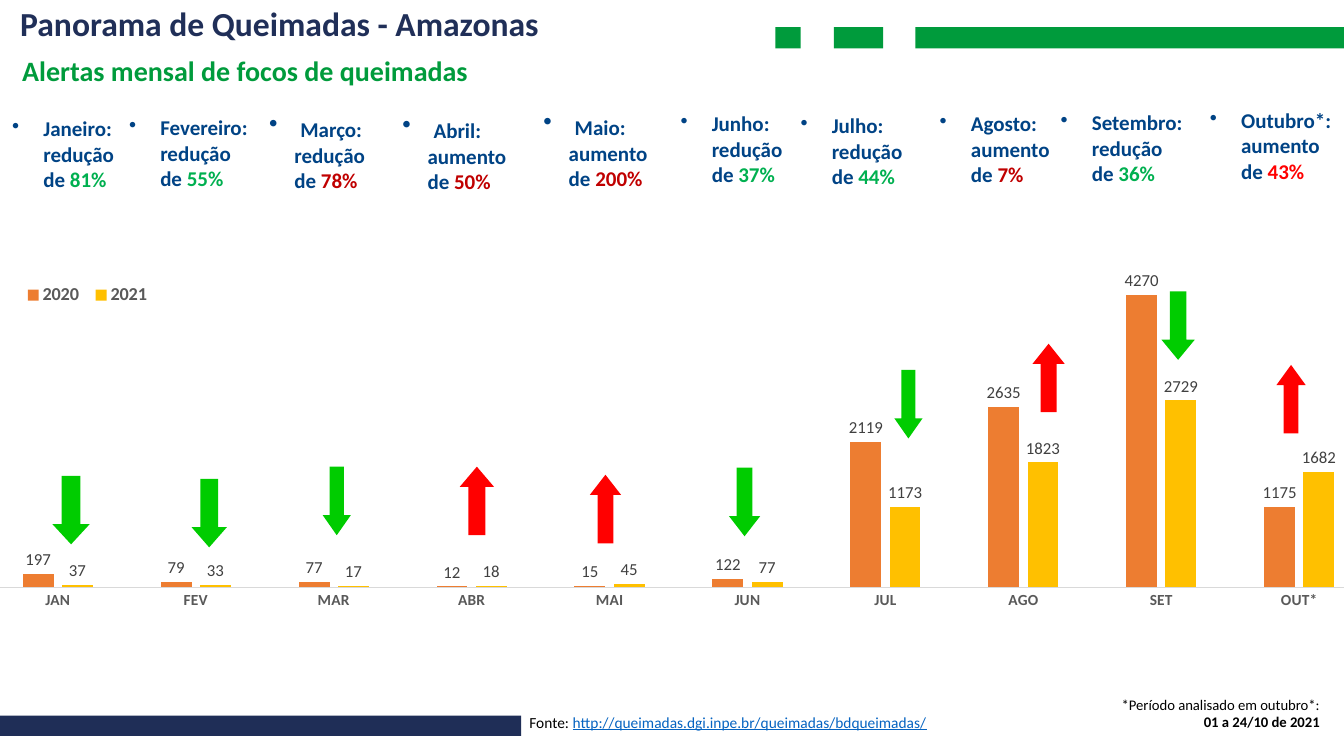
from collections import namedtuple

from lxml.etree import SubElement
from pptx import Presentation
from pptx.chart.data import CategoryChartData
from pptx.dml.color import RGBColor
from pptx.enum.chart import XL_CHART_TYPE as ChartType, XL_LABEL_POSITION as LabelPosition
from pptx.enum.chart import XL_LEGEND_POSITION as LegendPosition, XL_TICK_MARK as TickMark
from pptx.enum.shapes import MSO_SHAPE as Shape
from pptx.enum.text import MSO_ANCHOR as Anchor, MSO_AUTO_SIZE as AutoSize, PP_ALIGN as Align
from pptx.oxml.ns import qn
from pptx.util import Inches, Pt

FONT = "Calibri"
NAVY, GREEN, BLUE, BLACK = "1F2E57", "009B3C", "004385", "000000"
LOWER, HIGHER, ALERT = "00B050", "C00000", "FF0000"
ARROW_HEIGHT, HEAD_LENGTH = 0.68, 0.2

Month = namedtuple("Month", "label name trend percent colour tabbed caption arrow before after")
MONTHS = [
    Month("JAN", "Janeiro", "redução", "81%", LOWER, False, (0.1, 1.14, 1.12), (0.52, 4.72, 0.37), 197, 37),
    Month("FEV", "Fevereiro", "redução", "55%", LOWER, False, (1.26, 1.13, 1.27), (1.9, 4.75, 0.35), 79, 33),
    Month("MAR", "Março", "redução", "78%", HIGHER, True, (2.65, 1.1, 1.2), (3.2, 4.63, 0.28), 77, 17),
    Month("ABR", "Abril", "aumento", "50%", HIGHER, True, (3.97, 1.11, 1.28), (4.56, 4.63, 0.34), 12, 18),
    Month("MAI", "Maio", "aumento", "200%", HIGHER, True, (5.37, 1.08, 1.22), (5.85, 4.71, 0.31), 15, 45),
    Month("JUN", "Junho", "redução", "37%", LOWER, False, (6.73, 1.09, 1.23), (7.23, 4.64, 0.31), 122, 77),
    Month("JUL", "Julho", "redução", "44%", LOWER, False, (7.92, 1.11, 1.24), (8.87, 3.67, 0.28), 2119, 1173),
    Month("AGO", "Agosto", "aumento", "7%", HIGHER, False, (9.3, 1.09, 1.33), (10.24, 3.41, 0.32), 2635, 1823),
    Month("SET", "Setembro", "redução", "36%", LOWER, False, (10.5, 1.08, 1.27), (11.52, 2.89, 0.33), 4270, 2729),
    Month("OUT*", "Outubro*", "aumento", "43%", ALERT, False, (11.98, 1.06, 1.3), (12.66, 3.62, 0.29), 1175, 1682),
]


def colour(value):
    """Turn a hex string into a colour."""
    return RGBColor.from_string(value)


def set_font(font, size, value, bold=False):
    """Apply the slide font with a size, colour and weight."""
    font.name = FONT
    font.size = Pt(size)
    font.bold = bold
    font.color.rgb = colour(value)


def add_run(paragraph, text, size, value, bold=False):
    """Append one formatted run."""
    run = paragraph.add_run()
    run.text = text
    set_font(run.font, size, value, bold)
    return run


def add_text_box(slide, left, top, width, height):
    """Add a wrapping text box without side margins and return its frame."""
    box = slide.shapes.add_textbox(Inches(left), Inches(top), Inches(width), Inches(height))
    frame = box.text_frame
    frame.word_wrap = True
    frame.margin_left = frame.margin_right = frame.margin_bottom = 0
    frame.margin_top = Inches(0.01)
    frame.paragraphs[0].space_before = Pt(1)
    return frame


def add_filled(slide, preset, left, top, width, height, value):
    """Add a flat preset shape without an outline."""
    shape = slide.shapes.add_shape(preset, Inches(left), Inches(top), Inches(width), Inches(height))
    shape.shadow.inherit = False
    shape.fill.solid()
    shape.fill.fore_color.rgb = colour(value)
    shape.line.fill.background()
    return shape


def add_bullet(paragraph, left, hanging):
    """Give a paragraph a round bullet, a hanging indent and a tab stop."""
    properties = paragraph._p.get_or_add_pPr()
    properties.set("marL", str(Inches(left)))
    properties.set("indent", str(-Inches(hanging)))
    bullet_colour = SubElement(properties, qn("a:buClr"))
    SubElement(bullet_colour, qn("a:srgbClr"), val=BLUE)
    SubElement(properties, qn("a:buChar"), char="•")
    tabs = SubElement(properties, qn("a:tabLst"))
    SubElement(tabs, qn("a:tab"), pos=str(Inches(0.33)), algn="l")


def set_layout(element, position, inner=False):
    """Place a chart part by fractions of the chart area."""
    layout = element.find(qn("c:layout"))
    if layout is None:
        layout = SubElement(element, qn("c:layout"))
    anchor = element.find(qn("c:legendPos"))
    if anchor is not None:
        anchor.addnext(layout)
    else:
        element.insert(0, layout)
    manual = SubElement(layout, qn("c:manualLayout"))
    if inner:
        SubElement(manual, qn("c:layoutTarget"), val="inner")
    for name in ("xMode", "yMode"):
        SubElement(manual, qn("c:" + name), val="edge")
    for name, fraction in zip("xywh", position):
        SubElement(manual, qn("c:" + name), val=str(fraction))


def add_header(slide, left, top, width):
    """Place the title, the subtitle and the green bars."""
    title = slide.shapes.title
    title.left, title.top = Inches(left + 0.1), Inches(top - 0.02)
    title.width, title.height = Inches(5.84), Inches(0.5)
    frame = title.text_frame
    frame.text = "Panorama de Queimadas - Amazonas"
    frame.word_wrap = False
    frame.auto_size = AutoSize.NONE
    frame.vertical_anchor = Anchor.MIDDLE
    frame.paragraphs[0].alignment = Align.LEFT
    set_font(frame.paragraphs[0].runs[0].font, 24, "202F58", True)
    subtitle = add_text_box(slide, left + 0.22, top + 0.52, 4.45, 0.36)
    subtitle.text = "Alertas mensal de focos de queimadas"
    set_font(subtitle.paragraphs[0].runs[0].font, 20, GREEN, True)
    for offset, length in ((5.64, 0.25), (5.06, 0.49), (4.25, 4.25)):
        add_filled(slide, Shape.RECTANGLE, left + width - offset, top + 0.27, length, 0.21, GREEN)


def add_chart(slide, left, top, width, height):
    """Place the monthly column chart."""
    data = CategoryChartData()
    data.categories = [month.label for month in MONTHS]
    data.add_series("2020", [month.before for month in MONTHS])
    data.add_series("2021", [month.after for month in MONTHS])
    chart = slide.shapes.add_chart(ChartType.COLUMN_CLUSTERED, Inches(left), Inches(top),
                                   Inches(width), Inches(height), data).chart
    set_font(chart.font, 10, BLACK)
    chart.has_title = False
    chart.has_legend = True
    chart.legend.position = LegendPosition.BOTTOM
    chart.legend.include_in_layout = False
    set_font(chart.legend.font, 13, "595959", True)
    set_layout(chart.legend._element, (0.03, 0.04, 0.1, 0.08))
    values, categories = chart.value_axis, chart.category_axis
    values.minimum_scale, values.maximum_scale = 0, 4500
    values.has_major_gridlines = False
    values.visible = False
    categories.major_tick_mark = TickMark.NONE
    categories.format.line.color.rgb = colour("D9D9D9")
    categories.format.line.width = Pt(0.75)
    set_font(categories.tick_labels.font, 11, "595959", True)
    plot = chart.plots[0]
    plot.gap_width, plot.overlap, plot.vary_by_categories = 219, -27, False
    for series, fill in zip(plot.series, ("ED7D31", "FFC000")):
        series.format.fill.solid()
        series.format.fill.fore_color.rgb = colour(fill)
        labels = series.data_labels
        labels.show_value = True
        labels.position = LabelPosition.OUTSIDE_END
        set_font(labels.font, 12, "404040")
    set_layout(plot._element.getparent(), (0.01, 0.04, 0.98, 0.77), True)


def add_caption(slide, month, left, top, width):
    """Place the bulleted summary of one month."""
    paragraph = add_text_box(slide, left, top, width, 0.77).paragraphs[0]
    if month.tabbed:
        add_bullet(paragraph, 0.27, 0.25)
        add_run(paragraph, "\t", 18, BLACK)
    else:
        add_bullet(paragraph, 0.33, 0.31)
    add_run(paragraph, f"{month.name}: {month.trend} de ", 15, BLUE, True)
    add_run(paragraph, month.percent, 15, month.colour, True)


def add_trend_arrow(slide, month, left, top, width):
    """Place the arrow that shows the trend of one month."""
    rising = month.trend == "aumento"
    preset, fill = (Shape.UP_ARROW, "FF0000") if rising else (Shape.DOWN_ARROW, "00CC00")
    arrow = add_filled(slide, preset, left, top, width, ARROW_HEIGHT, fill)
    arrow.adjustments[1] = HEAD_LENGTH / width


def add_footer(slide, left, top, width):
    """Place the navy bar, the source and the period note."""
    add_filled(slide, Shape.RECTANGLE, left, top + 0.21, 5.17, 0.2, NAVY)
    source = add_text_box(slide, left + 5.25, top + 0.17, 3.96, 0.21).paragraphs[0]
    add_run(source, "Fonte: ", 11, BLACK)
    address = add_run(source, "http://queimadas.dgi.inpe.br/queimadas/bdqueimadas/", 11, "0563C1")
    address.font.underline = True
    period = add_text_box(slide, left + width - 2.26, top, 2.02, 0.37)
    period.text = "*Período analisado em outubro*:\n01 a 24/10 de 2021"
    for paragraph, bold in zip(period.paragraphs, (False, True)):
        paragraph.alignment = Align.RIGHT
        set_font(paragraph.runs[0].font, 10.5, BLACK, bold)


def main():
    """Build and save the presentation."""
    presentation = Presentation()
    presentation.slide_width, presentation.slide_height = Inches(13.33), Inches(7.5)
    slide = presentation.slides.add_slide(presentation.slide_layouts[5])
    add_chart(slide, -0.25, 2.61, 13.96, 3.97)
    add_header(slide, 0, 0, 13.33)
    for month in MONTHS:
        add_caption(slide, month, *month.caption)
        add_trend_arrow(slide, month, *month.arrow)
    add_footer(slide, 0, 6.89, 13.33)
    presentation.save("out.pptx")


if __name__ == "__main__":
    main()
